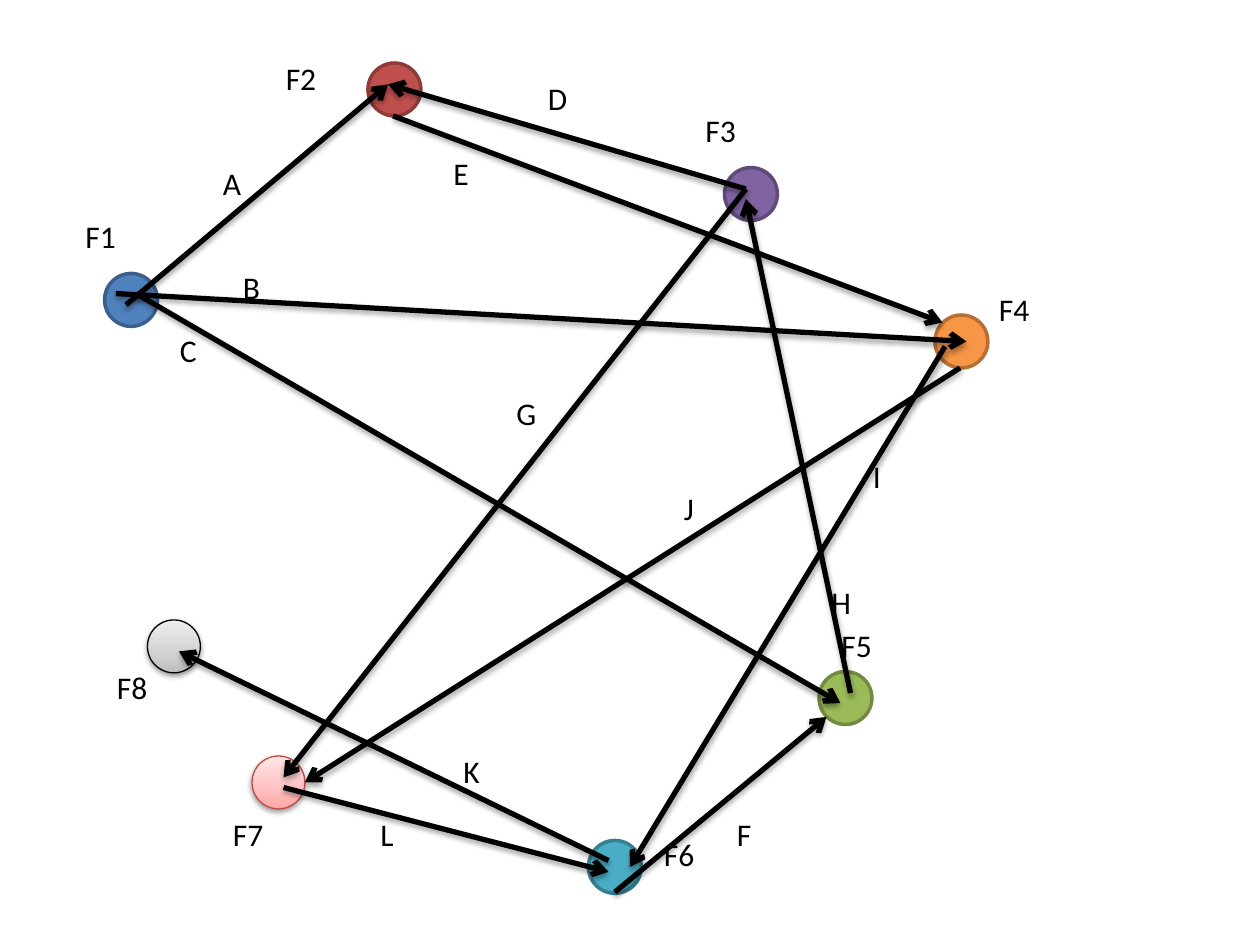
from typing import NamedTuple, Optional

from lxml import etree
from pptx import Presentation
from pptx.dml.color import RGBColor
from pptx.enum.shapes import MSO_CONNECTOR, MSO_SHAPE
from pptx.enum.text import MSO_AUTO_SIZE
from pptx.oxml.ns import qn
from pptx.util import Inches, Pt

ELLIPSE = MSO_SHAPE.OVAL
STRAIGHT = MSO_CONNECTOR.STRAIGHT
GROW = MSO_AUTO_SIZE.SHAPE_TO_FIT_TEXT

BLACK = RGBColor(0x00, 0x00, 0x00)
BLUE, DARK_BLUE = RGBColor(0x4F, 0x81, 0xBD), RGBColor(0x3A, 0x5F, 0x8C)
RED, DARK_RED = RGBColor(0xC0, 0x50, 0x4D), RGBColor(0x8E, 0x3B, 0x39)
PURPLE, DARK_PURPLE = RGBColor(0x80, 0x64, 0xA2), RGBColor(0x5F, 0x4A, 0x78)
ORANGE, DARK_ORANGE = RGBColor(0xF7, 0x96, 0x46), RGBColor(0xB7, 0x6F, 0x34)
GREEN, DARK_GREEN = RGBColor(0x9B, 0xBB, 0x59), RGBColor(0x73, 0x8A, 0x42)
TEAL, DARK_TEAL = RGBColor(0x4B, 0xAC, 0xC6), RGBColor(0x37, 0x7F, 0x92)
ROSE_LINE = RGBColor(0xBF, 0x4C, 0x48)
ROSE_STOPS = (RGBColor(0xFF, 0xA6, 0xA5), RGBColor(0xFF, 0xC0, 0xBF), RGBColor(0xFF, 0xE7, 0xE7))
GREY_STOPS = (RGBColor(0xBD, 0xBD, 0xBD), RGBColor(0xD1, 0xD1, 0xD1), RGBColor(0xEE, 0xEE, 0xEE))
STOP_POSITIONS = (0, 35, 100)

FONT = "Calibri"
FONT_SIZE = Pt(18)
NODE_SIZE = 0.42
LABEL_HEIGHT = 0.4


class Node(NamedTuple):
    left: float
    top: float
    line: RGBColor
    fill: Optional[RGBColor] = None
    stops: tuple = ()


class Label(NamedTuple):
    text: str
    left: float
    top: float
    width: float = 0.5


class Arrow(NamedTuple):
    start_x: float
    start_y: float
    end_x: float
    end_y: float


# Nodes F1 to F8
NODES = [
    Node(0.83, 2.17, DARK_BLUE, BLUE),
    Node(2.92, 0.5, DARK_RED, RED),
    Node(5.75, 1.33, DARK_PURPLE, PURPLE),
    Node(7.42, 2.5, DARK_ORANGE, ORANGE),
    Node(6.5, 5.33, DARK_GREEN, GREEN),
    Node(4.67, 6.67, DARK_TEAL, TEAL),
    Node(2, 6, ROSE_LINE, stops=ROSE_STOPS),
    Node(1.17, 4.92, BLACK, stops=GREY_STOPS),
]

NODE_LABELS = [
    Label("F1", 0.58, 1.67, 0.67),
    Label("F2", 2.17, 0.42, 0.67),
    Label("F3", 5.5, 0.83, 0.75),
    Label("F4", 7.83, 2.25, 0.58),
    Label("F5", 6.58, 4.92, 0.75),
    Label("F6", 5.17, 6.58, 0.75),
    Label("F7", 1.75, 6.42, 0.75),
    Label("F8", 0.83, 5.25, 0.58),
]

ARROWS = [
    Arrow(7.5, 2.75, 5, 6.88),
    Arrow(4.88, 7.08, 6.56, 5.69),
    Arrow(1.08, 2.33, 6.67, 5.58),
    Arrow(1, 2.42, 3.08, 0.67),
    Arrow(0.92, 2.33, 7.67, 2.71),
    Arrow(6.75, 5.5, 5.92, 1.58),
    Arrow(3.12, 0.92, 7.48, 2.56),
    Arrow(5.92, 1.5, 2.25, 6.17),
    Arrow(4.83, 6.83, 1.42, 5.17),
    Arrow(2.25, 6.25, 4.83, 6.92),
    Arrow(5.92, 1.5, 3.08, 0.67),
    Arrow(7.62, 2.92, 2.42, 6.21),
]

ARROW_LABELS = [
    Label("A", 1.67, 1.25),
    Label("B", 1.83, 2.08, 0.42),
    Label("C", 1.33, 2.58),
    Label("D", 4.25, 0.58),
    Label("E", 3.5, 1.17),
    Label("G", 4, 3.08),
    Label("H", 6.5, 4.58),
    Label("I", 6.83, 3.58, 0.58),
    Label("J", 5.33, 3.83),
    Label("K", 3.58, 5.92),
    Label("L", 2.92, 6.42),
    Label("F", 5.75, 6.42),
]


def add_color(parent, color: RGBColor):
    return etree.SubElement(parent, qn("a:srgbClr"), val=str(color))


def add_shadow(effects, distance: float, opacity: int) -> None:
    """Add a soft black shadow falling straight down."""
    shadow = etree.SubElement(
        effects, qn("a:outerShdw"), blurRad=str(Pt(3.1)), dist=str(Pt(distance)),
        dir="5400000", rotWithShape="0")
    etree.SubElement(add_color(shadow, BLACK), qn("a:alpha"), val=str(opacity * 1000))


def set_gradient(shape, colors: tuple) -> None:
    """Fill the shape with stops running from bottom to top."""
    shape.fill.gradient()
    shape.fill.gradient_angle = 90
    stop_list = shape.element.spPr.find(qn("a:gradFill")).find(qn("a:gsLst"))
    for stop in list(stop_list):
        stop_list.remove(stop)
    for position, color in zip(STOP_POSITIONS, colors):
        add_color(etree.SubElement(stop_list, qn("a:gs"), pos=str(position * 1000)), color)


def add_node(slide, node: Node) -> None:
    shape = slide.shapes.add_shape(
        ELLIPSE, Inches(node.left), Inches(node.top), Inches(NODE_SIZE), Inches(NODE_SIZE))
    shape.line.color.rgb = node.line
    shape.shadow.inherit = False
    if node.stops:
        set_gradient(shape, node.stops)
        shape.line.width = Pt(0.75)
        add_shadow(shape.element.spPr.find(qn("a:effectLst")), 1.6, 38)
    else:
        shape.fill.solid()
        shape.fill.fore_color.rgb = node.fill
        shape.line.width = Pt(2)


def add_label(slide, label: Label) -> None:
    box = slide.shapes.add_textbox(
        Inches(label.left), Inches(label.top), Inches(label.width), Inches(LABEL_HEIGHT))
    frame = box.text_frame
    frame.word_wrap = True
    frame.auto_size = GROW
    run = frame.paragraphs[0].add_run()
    run.text = label.text
    run.font.name = FONT
    run.font.size = FONT_SIZE
    run.font.color.rgb = BLACK


def add_arrow(slide, arrow: Arrow) -> None:
    connector = slide.shapes.add_connector(STRAIGHT, *(Inches(value) for value in arrow))
    connector.line.color.rgb = BLACK
    connector.line.width = Pt(3)
    properties = connector.element.spPr
    etree.SubElement(properties.find(qn("a:ln")), qn("a:tailEnd"), type="arrow")
    add_shadow(etree.SubElement(properties, qn("a:effectLst")), 1.8, 35)


def main() -> None:
    presentation = Presentation()
    presentation.slide_width = Inches(10)
    presentation.slide_height = Inches(7.5)
    # The slide has no title, so it uses the blank layout
    slide = presentation.slides.add_slide(presentation.slide_layouts[6])

    # Back to front: nodes, their names, arrows, arrow names
    for node in NODES:
        add_node(slide, node)
    for label in NODE_LABELS:
        add_label(slide, label)
    for arrow in ARROWS:
        add_arrow(slide, arrow)
    for label in ARROW_LABELS:
        add_label(slide, label)

    presentation.save("out.pptx")


if __name__ == "__main__":
    main()
